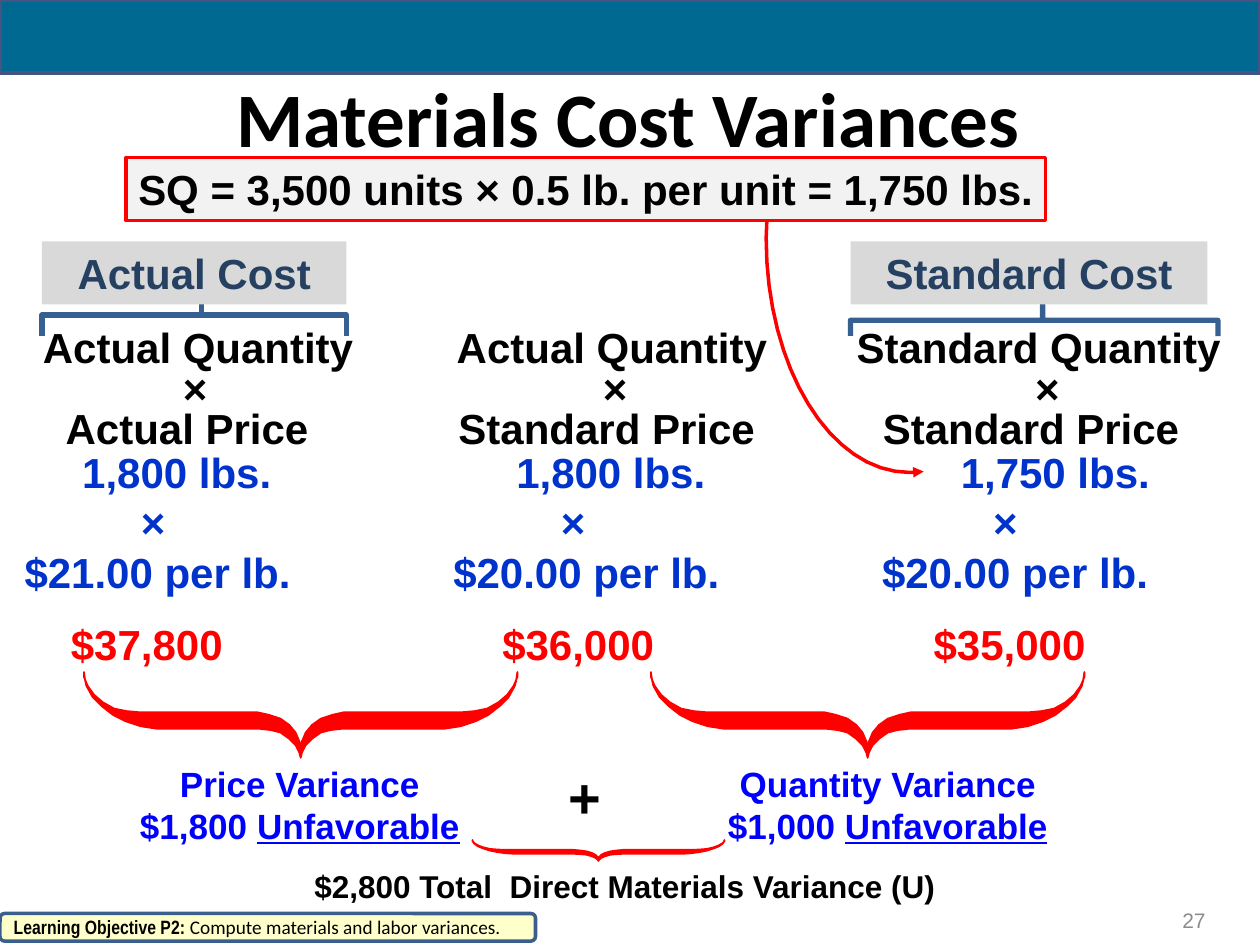
from dataclasses import dataclass

from lxml import etree
from pptx import Presentation
from pptx.dml.color import RGBColor
from pptx.enum.shapes import MSO_SHAPE
from pptx.enum.text import MSO_ANCHOR, PP_ALIGN
from pptx.oxml.ns import qn
from pptx.util import Pt

RECT = MSO_SHAPE.RECTANGLE
ROUND = MSO_SHAPE.ROUNDED_RECTANGLE
BRACE = MSO_SHAPE.RIGHT_BRACE
LEFT, MID, RIGHT = PP_ALIGN.LEFT, PP_ALIGN.CENTER, PP_ALIGN.RIGHT
CENTER = MSO_ANCHOR.MIDDLE

BLACK, RED, BLUE, ROYAL = "000000", "FF0000", "0000FF", "0033CC"

# Left half of a tapered brace: lower edge, then upper edge back to the tip.
HALF, DEPTH = 1.72, 0.68
LOWER = [(0, 0), (.01, .07), (.02, .11), (.07, .2), (.14, .27), (.23, .34),
         (.33, .39), (.45, .43), (.58, .45), (.64, .45), (1.39, .45),
         (1.48, .46), (1.56, .48), (1.63, .53), (1.68, .58), (1.71, .64),
         (1.72, .68)]
UPPER = [(1.72, .59), (1.71, .55), (1.68, .48), (1.63, .42), (1.56, .37),
         (1.47, .34), (1.38, .32), (1.33, .32), (.45, .32), (.34, .31),
         (.24, .29), (.15, .24), (.08, .18), (.03, .11), (0, .04)]


@dataclass
class Box:
    x: float
    y: float
    w: float
    h: float

    def place(self):
        return Pt(self.x), Pt(self.y), Pt(self.w), Pt(self.h)


@dataclass
class Row:
    cells: list[str]
    tabs: list[float]
    color: str
    before: float = 0


@dataclass
class Head:
    text: str
    label: Box
    brace: Box


@dataclass
class Result:
    name: str
    amount: str
    x: float


def paint(part, color: str) -> None:
    """Apply a hex colour to a fill, a line's fill or a font."""
    if hasattr(part, "solid"):
        part.solid()
        part.fore_color.rgb = RGBColor.from_string(color)
    else:
        part.color.rgb = RGBColor.from_string(color)


def dress(shape, fill: str = "", line: str = "", width: float = 1) -> None:
    shape.shadow.inherit = False
    if fill:
        paint(shape.fill, fill)
    else:
        shape.fill.background()
    if line:
        paint(shape.line.fill, line)
        shape.line.width = Pt(width)
    else:
        shape.line.fill.background()


def style(run, size: float, color: str = BLACK, bold: bool = True,
          face: str = "Arial") -> None:
    font = run.font
    font.size, font.bold, font.name = Pt(size), bold, face
    paint(font, color)


def write(shape, text: str, size: float, color: str = BLACK, align=MID,
          bold: bool = True, face: str = "Arial", anchor=None):
    frame = shape.text_frame
    frame.word_wrap = True
    frame.text = text
    if anchor is not None:
        frame.vertical_anchor = anchor
    for para in frame.paragraphs:
        para.alignment = align
        for run in para.runs:
            style(run, size, color, bold, face)
    return frame


def table(shapes, box: Box, rows: list[Row], pitch: float) -> None:
    """Write rows in one text box, each cell at its own tab stop."""
    frame = shapes.add_textbox(*box.place()).text_frame
    frame.word_wrap = True
    frame.margin_left = 0
    for i, row in enumerate(rows):
        para = frame.add_paragraph() if i else frame.paragraphs[0]
        para.text = "".join("\t" + cell for cell in row.cells)
        para.line_spacing = Pt(pitch)
        para.space_before = Pt(row.before)
        stops = etree.SubElement(para._p.get_or_add_pPr(), qn("a:tabLst"))
        for x in row.tabs:
            etree.SubElement(stops, qn("a:tab"), pos=str(Pt(x - box.x)), algn="l")
        for run in para.runs:
            style(run, 24, row.color)


def trace(shapes, points: list, close: bool):
    spots = [(Pt(x), Pt(y)) for x, y in points]
    pen = shapes.build_freeform(*spots[0], scale=1.0)
    pen.add_line_segments(spots[1:], close=close)
    return pen.convert_to_shape()


def swoop(shapes, box: Box) -> None:
    """Draw a tapered brace that opens upward."""
    def flip(side):
        return [(2 * HALF - x, y) for x, y in reversed(side)]

    edge = LOWER + flip(LOWER)[1:] + flip(UPPER) + UPPER[1:]
    points = [(box.x + x / HALF * box.w / 2, box.y + y / DEPTH * box.h)
              for x, y in edge]
    dress(trace(shapes, points, True), RED, RED)


def bend(a, b, c, d, steps: int = 16) -> list:
    """Sample a cubic curve, leaving out its first point."""
    points = []
    for i in range(1, steps + 1):
        t = i / steps
        u = 1 - t
        points.append(tuple(u**3 * p + 3 * u * u * t * q + 3 * u * t * t * r + t**3 * s
                            for p, q, r, s in zip(a, b, c, d)))
    return points


def arrow(shapes) -> None:
    top, side, base, tip = (438.2, 126), (437.8, 136), (519.8, 270), (527.8, 269.5)
    points = [top, side]
    points += bend(side, (437.8, 210.2), (474.5, 270), base)
    points.append(tip)
    shape = trace(shapes, points, False)
    dress(shape, line=RED, width=2)
    etree.SubElement(shape.line._get_or_add_ln(), qn("a:tailEnd"), type="triangle")


def header(shapes, head: Head) -> None:
    group = shapes.add_group_shape().shapes
    brace = group.add_shape(BRACE, *head.brace.place())
    brace.rotation = 270
    brace.adjustments[0], brace.adjustments[1] = 0, 0.523
    dress(brace, line="376092", width=3)
    label = group.add_shape(RECT, *head.label.place())
    dress(label, "D9D9D9")
    write(label, head.text, 24, "254061")


def outcome(shapes, item: Result) -> None:
    box = shapes.add_textbox(*Box(item.x, 432, 306.7, 55.4).place())
    frame = write(box, f"{item.name}\n{item.amount} ", 20, BLUE)
    run = frame.paragraphs[1].add_run()
    run.text = "Unfavorable"
    style(run, 20, BLUE)
    run.font.underline = True


def main() -> None:
    deck = Presentation()
    deck.slide_width, deck.slide_height = Pt(720), Pt(540)
    shapes = deck.slides.add_slide(deck.slide_layouts[6]).shapes

    def note(box: Box, *args, **more):
        return write(shapes.add_textbox(*box.place()), *args, **more)

    band = shapes.add_shape(RECT, *Box(0, 0, 720, 42).place())
    dress(band, "006991", "445583", 2.25)

    table(shapes, Box(17.3, 185.8, 690.5, 77), [
        Row(["Actual Quantity", "Actual Quantity", "Standard Quantity"],
            [24.5, 261, 489.5], BLACK),
        Row(["×"] * 3, [104.5, 344.5, 591.5], BLACK),
        Row(["Actual Price", "Standard Price", "Standard Price"],
            [37.5, 262, 504.5], BLACK)], 23.2)
    table(shapes, Box(0, 252, 697, 137.5), [
        Row(["1,800 lbs.", "1,800 lbs.", "1,750 lbs."], [47, 295, 549], ROYAL),
        Row(["×"] * 3, [80.5, 320.5, 567.5], ROYAL),
        Row(["$21.00 per lb.", "$20.00 per lb.", "$20.00 per lb."],
            [14, 259, 504], ROYAL),
        Row(["$37,800", "$36,000", "$35,000"], [40.5, 287, 533.5], RED, 12.5)], 28.6)

    arrow(shapes)
    need = shapes.add_shape(RECT, *Box(72, 90, 525.6, 36).place())
    dress(need, "F2F2F2", RED, 2)
    write(need, "SQ = 3,500 units × 0.5 lb. per unit = 1,750 lbs.", 24,
          anchor=CENTER).word_wrap = False

    for box in (Box(48, 384, 247.7, 49), Box(372, 384, 247.7, 49),
                Box(270, 480, 144, 12)):
        swoop(shapes, box)
    for item in (Result("Price Variance", "$1,800", 18),
                 Result("Quantity Variance", "$1,000", 354)):
        outcome(shapes, item)

    note(Box(23, 21.6, 672, 90), "Materials Cost Variances", 44,
         face="Calibri", anchor=CENTER)
    note(Box(528, 511.2, 168, 28.8), "27", 12, "8C8C8C", RIGHT, False, anchor=CENTER)
    for head in (
            Head("Actual Cost", Box(24, 138, 174, 36), Box(99, 93, 24, 174)),
            Head("Standard Cost", Box(486, 138, 204, 36), Box(582, 78, 18, 210))):
        header(shapes, head)
    note(Box(162, 492, 390, 29), "$2,800 Total  Direct Materials Variance (U)", 18)
    note(Box(318, 432, 48, 46), "+", 32, align=LEFT)

    goal = shapes.add_shape(ROUND, *Box(0, 522, 306, 15.8).place())
    dress(goal, "FFFFCC", "3A5F8C", 2)
    frame = write(goal, "Learning Objective P2: ", 11, align=LEFT,
                  face="Arial Narrow", anchor=CENTER)
    run = frame.paragraphs[0].add_run()
    run.text = "Compute materials and labor variances."
    style(run, 11, bold=False, face="Calibri")

    deck.save("out.pptx")


if __name__ == "__main__":
    main()
